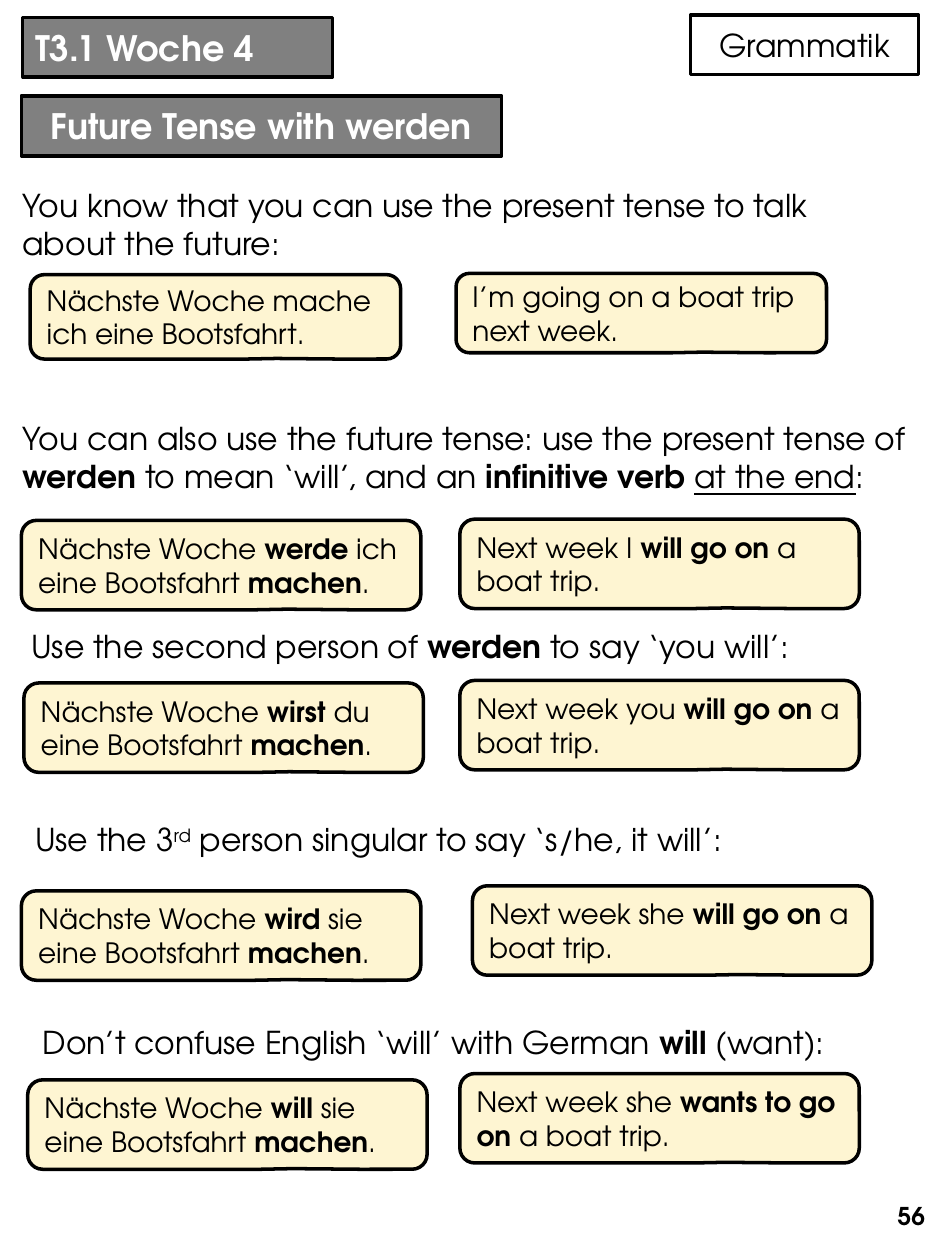
from pptx import Presentation
from pptx.dml.color import RGBColor
from pptx.enum.shapes import MSO_SHAPE
from pptx.enum.text import MSO_ANCHOR, MSO_AUTO_SIZE, PP_ALIGN
from pptx.util import Inches, Pt

RECT, CARD = MSO_SHAPE.RECTANGLE, MSO_SHAPE.ROUNDED_RECTANGULAR_CALLOUT
TOP, MIDDLE = MSO_ANCHOR.TOP, MSO_ANCHOR.MIDDLE
LEFT, CENTER, RIGHT = PP_ALIGN.LEFT, PP_ALIGN.CENTER, PP_ALIGN.RIGHT
FONT = "TeX Gyre Adventor"
BLACK, WHITE, GRAY, CREAM = "000000", "FFFFFF", "808080", "FEF5D2"
TAIL = (0.164, 0.493, 0.167)

# Text is a list of runs: a plain string, or (string, style)
# with style b = bold, u = underlined, s = superscript.
RULES = [
    ((0.08, 1.43, 6.74, 0.71),
     ["You know that you can use the present tense to talk about the future:"]),
    ((0.08, 3.28, 7.35, 0.71),
     ["You can also use the future tense: use the present tense of ", ("werden", "b"),
      " to mean ‘will’, and an ", ("infinitive verb ", "b"), ("at the end", "u"), ":"]),
    ((0.15, 4.93, 7.35, 0.4),
     ["Use the second person of ", ("werden", "b"), " to say ‘you will’:"]),
    ((0.18, 6.46, 6.89, 0.4),
     ["Use the 3", ("rd", "s"), " person singular to say ‘s/he, it will’:"]),
    ((0.24, 8.07, 6.89, 0.4),
     ["Don’t confuse English ‘will’ with German ", ("will ", "b"), "(want):"]),
]


def german(verb, rest):
    return ["Nächste Woche ", (verb, "b"), rest + "eine Bootsfahrt ", ("machen", "b"), "."]


def english(who, verb="will go on "):
    return [f"Next week {who} ", (verb, "b"), "a boat trip."]


WIDE = (3.17, 0.71)
CARDS = [
    ((0.24, 2.18, 2.94, 0.67), ["Nächste Woche mache ich eine Bootsfahrt."]),
    ((3.62, 2.17, 2.94, 0.63), ["I’m going on a boat trip next week."]),
    ((0.17, 4.13, *WIDE), german("werde", " ich ")),
    ((3.65, 4.12, *WIDE), english("I")),
    ((0.19, 5.42, *WIDE), german("wirst ", "du ")),
    ((3.65, 5.4, *WIDE), english("you")),
    ((0.17, 7.07, *WIDE), german("wird ", "sie ")),
    ((3.75, 7.03, *WIDE), english("she")),
    ((0.22, 8.57, *WIDE), german("will ", "sie ")),
    ((3.65, 8.52, *WIDE), english("she", "wants to go on ")),
]


def rgb(code):
    return RGBColor.from_string(code)


def write(shape, runs, size, color=BLACK, align=LEFT, anchor=MIDDLE):
    frame = shape.text_frame
    frame.word_wrap = True
    frame.vertical_anchor = anchor
    para = frame.paragraphs[0]
    para.alignment = align
    for item in runs:
        text, style = (item, "") if isinstance(item, str) else item
        run = para.add_run()
        run.text = text
        font = run.font
        font.name, font.size = FONT, Pt(size)
        font.color.rgb = rgb(color)
        font.bold = style == "b"
        font.underline = style == "u"
        if style == "s":
            font._element.set("baseline", "30000")


def draw(slide, kind, box, fill):
    shape = slide.shapes.add_shape(kind, *map(Inches, box))
    shape.shadow.inherit = False
    shape.fill.solid()
    shape.fill.fore_color.rgb = rgb(fill)
    shape.line.color.rgb = rgb(BLACK)
    shape.line.width = Pt(2)
    return shape


def label(slide, box, runs, size, align=LEFT):
    shape = slide.shapes.add_textbox(*map(Inches, box))
    write(shape, runs, size, align=align, anchor=TOP)
    return shape


def main():
    deck = Presentation()
    deck.slide_width, deck.slide_height = Inches(7.5), Inches(10)
    slide = deck.slides.add_slide(deck.slide_layouts[5])

    title = slide.shapes.title
    title.left, title.top, title.width, title.height = map(Inches, (0.18, 0.11, 2.32, 0.53))
    write(title, [("T3.1 Woche 4", "b")], 20, WHITE)
    title.text_frame.auto_size = MSO_AUTO_SIZE.NONE
    bar = draw(slide, RECT, (0.18, 0.14, 2.46, 0.47), GRAY)
    title.element.addprevious(bar.element)  # bar lies behind the title

    topic = draw(slide, RECT, (5.48, 0.12, 1.81, 0.47), WHITE)
    write(topic, ["Grammatik"], 18, align=CENTER)
    head = draw(slide, RECT, (0.17, 0.76, 3.81, 0.48), GRAY)
    write(head, [("Future Tense with werden", "b")], 20, WHITE, CENTER)

    for box, runs in RULES:
        rule = label(slide, box, runs, 18)
        rule.text_frame.auto_size = MSO_AUTO_SIZE.SHAPE_TO_FIT_TEXT
    for box, runs in CARDS:
        card = draw(slide, CARD, box, CREAM)
        for i, value in enumerate(TAIL):
            card.adjustments[i] = value
        write(card, runs, 16)

    label(slide, (5.69, 9.48, 1.75, 0.69), [("56", "b")], 14, RIGHT)
    deck.save("out.pptx")


if __name__ == "__main__":
    main()
